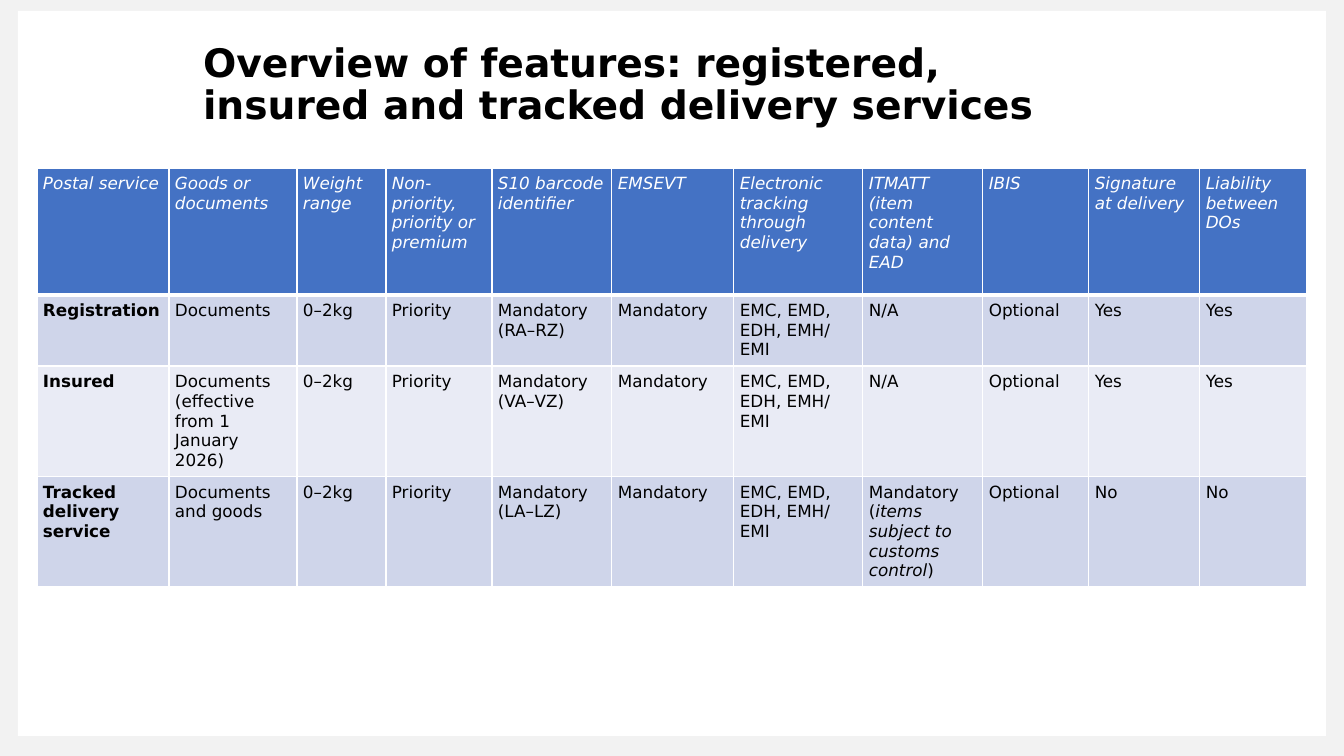
"""Build a slide with a table comparing registered, insured and tracked delivery services."""
from dataclasses import dataclass

from lxml.etree import SubElement
from pptx import Presentation
from pptx.dml.color import RGBColor
from pptx.enum.shapes import MSO_SHAPE
from pptx.enum.text import MSO_ANCHOR, MSO_AUTO_SIZE, PP_ALIGN
from pptx.oxml.ns import qn
from pptx.util import Pt


@dataclass(frozen=True)
class Theme:
    font: str = "DejaVu Sans"
    title_size: int = 28
    cell_size: int = 12
    ink: str = "000000"
    white: str = "FFFFFF"
    frame: str = "F2F2F2"
    header: str = "4472C4"
    bands: tuple = ("E9EBF5", "CFD5EA")


THEME = Theme()
PX = 914400 / 100.8
COLUMN_WIDTHS = [132, 128, 89, 106, 120, 122, 129, 120, 106, 111, 107]
ROW_HEIGHTS = [127, 68, 106, 107]
TRACKING = "EMC, EMD, EDH, EMH/\vEMI"
HEADINGS = [
    "Postal service", "Goods or documents", "Weight range",
    "Non-priority, priority or premium", "S10 barcode identifier", "EMSEVT",
    "Electronic tracking through delivery", "ITMATT (item content data) and EAD",
    "IBIS", "Signature at delivery", "Liability between DOs",
]
SERVICES = [
    ("Registration", "Documents", "RA–RZ", ["N/A"], "Yes"),
    ("Insured", "Documents (effective from 1 January 2026)", "VA–VZ", ["N/A"], "Yes"),
    ("Tracked delivery service", "Documents and goods", "LA–LZ",
     ["Mandatory (", "items subject to customs control", ")"], "No"),
]


def px(length):
    return round(length * PX)


def style(span, size, color, bold=False, italic=False):
    span.font.name = THEME.font
    span.font.size = Pt(size)
    span.font.color.rgb = RGBColor.from_string(color)
    span.font.bold = bold
    span.font.italic = italic


deck = Presentation()
deck.slide_width, deck.slide_height = px(1344), px(756)
page = deck.slides.add_slide(deck.slide_layouts[5])

for bounds, color in [((0, 0, 1344, 756), THEME.frame), ((18, 11, 1308, 725), THEME.white)]:
    panel = page.shapes.add_shape(MSO_SHAPE.RECTANGLE, *map(px, bounds))
    panel.shadow.inherit = False
    panel.fill.solid()
    panel.fill.fore_color.rgb = RGBColor.from_string(color)
    panel.line.fill.background()

rows = [[[heading] for heading in HEADINGS]]
for service, contents, barcode, item_data, yes_no in SERVICES:
    rows.append([[service], [contents], ["0–2kg"], ["Priority"], [f"Mandatory ({barcode})"],
                 ["Mandatory"], [TRACKING], item_data, ["Optional"], [yes_no], [yes_no]])

table = page.shapes.add_table(len(rows), len(HEADINGS), px(37), px(168),
                              px(sum(COLUMN_WIDTHS)), px(sum(ROW_HEIGHTS))).table
for column, width in zip(table.columns, COLUMN_WIDTHS):
    column.width = px(width)
for row, height in zip(table.rows, ROW_HEIGHTS):
    row.height = px(height)

for row_index, row in enumerate(rows):
    is_header = row_index == 0
    for column_index, parts in enumerate(row):
        cell = table.cell(row_index, column_index)
        cell.margin_left = cell.margin_right = cell.margin_top = cell.margin_bottom = px(6)
        para = cell.text_frame.paragraphs[0]
        para.space_before = para.space_after = Pt(3)
        if len(parts) == 1:
            para.text = parts[0]
        else:
            for part in parts:
                para.add_run().text = part
        for span_index, span in enumerate(para.runs):
            is_note = len(parts) > 1 and span_index == 1
            style(span, THEME.cell_size, THEME.white if is_header else THEME.ink,
                  bold=column_index == 0 and not is_header, italic=is_header or is_note)
        properties = cell._tc.get_or_add_tcPr()
        for side in ("lnL", "lnR", "lnT", "lnB"):
            weight = 3 if is_header and side == "lnB" else 1
            border = SubElement(properties, qn(f"a:{side}"), w=str(Pt(weight)))
            SubElement(SubElement(border, qn("a:solidFill")), qn("a:srgbClr"), val=THEME.white)
        cell.fill.solid()
        cell.fill.fore_color.rgb = RGBColor.from_string(
            THEME.header if is_header else THEME.bands[row_index % 2])

title = page.shapes.title
title.left, title.top, title.width, title.height = map(px, (193, 54, 878, 64))
title.element.getparent().append(title.element)
box = title.text_frame
box.text = "Overview of features: registered, insured and tracked delivery services"
box.word_wrap = True
box.auto_size = MSO_AUTO_SIZE.NONE
box.vertical_anchor = MSO_ANCHOR.MIDDLE
para = box.paragraphs[0]
para.alignment = PP_ALIGN.LEFT
para.line_spacing = 0.9
style(para.runs[0], THEME.title_size, THEME.ink, bold=True)

deck.save("out.pptx")
